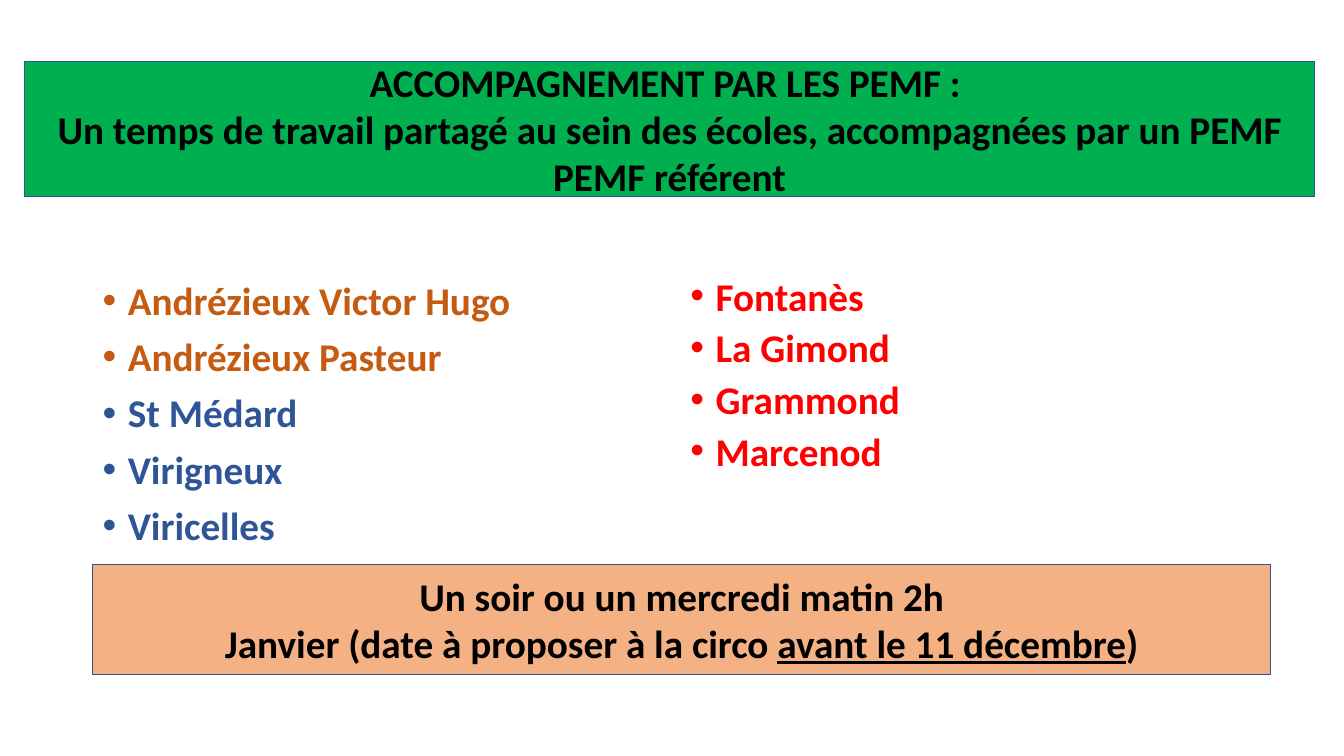
from lxml.etree import SubElement
from pptx import Presentation
from pptx.dml.color import RGBColor
from pptx.enum.shapes import MSO_SHAPE
from pptx.enum.text import MSO_ANCHOR, MSO_AUTO_SIZE, PP_ALIGN
from pptx.oxml.ns import qn
from pptx.util import Inches, Pt

COLORS = {
    "green": "00B050",
    "peach": "F4B183",
    "outline": "325491",
    "black": "000000",
    "orange": "C55A11",
    "blue": "2F5597",
    "red": "FF0000",
}


def color(name):
    """Return the named colour."""
    return RGBColor.from_string(COLORS[name])


def format_font(paragraph, color_name):
    """Apply the slide's bold text style to a paragraph."""
    font = paragraph.font
    font.name = "Calibri"
    font.size = Pt(28)
    font.bold = True
    font.color.rgb = color(color_name)


def fill_banner(shape, box, fill_name, lines):
    """Place a banner and write its lines, each a list of (text, underlined) runs."""
    shape.left, shape.top, shape.width, shape.height = map(Inches, box)
    shape.fill.solid()
    shape.fill.fore_color.rgb = color(fill_name)
    shape.line.color.rgb = color("outline")
    shape.line.width = Pt(1)
    frame = shape.text_frame
    frame.word_wrap = True
    frame.auto_size = MSO_AUTO_SIZE.NONE
    frame.vertical_anchor = MSO_ANCHOR.MIDDLE
    for index, runs in enumerate(lines):
        paragraph = frame.add_paragraph() if index else frame.paragraphs[0]
        paragraph.alignment = PP_ALIGN.CENTER
        format_font(paragraph, "black")
        for text, underlined in runs:
            run = paragraph.add_run()
            run.text = text
            if underlined:
                run.font.underline = True


def add_title_banner(slide, box):
    """Turn the title placeholder into the green banner."""
    fill_banner(slide.shapes.title, box, "green", [
        [("ACCOMPAGNEMENT PAR LES PEMF : ", False)],
        [("Un temps de travail partagé au sein des écoles, accompagnées par un PEMF", False)],
        [("PEMF référent", False)],
    ])


def add_date_banner(slide, box):
    """Add the peach banner with the meeting dates."""
    shape = slide.shapes.add_shape(MSO_SHAPE.RECTANGLE, *map(Inches, box))
    shape.shadow.inherit = False
    fill_banner(shape, box, "peach", [
        [("Un soir ou un mercredi matin 2h", False)],
        [("Janvier (date à proposer à la circo ", False),
         ("avant le 11 décembre", True), (")", False)],
    ])


def add_school_list(slide, box, line_spacing, schools):
    """Add a bulleted list of (school, colour) pairs."""
    frame = slide.shapes.add_textbox(*map(Inches, box)).text_frame
    frame.word_wrap = True
    for index, (school, color_name) in enumerate(schools):
        paragraph = frame.add_paragraph() if index else frame.paragraphs[0]
        paragraph.text = school
        paragraph.line_spacing = line_spacing
        paragraph.space_before = Pt(10)
        format_font(paragraph, color_name)
        properties = paragraph._p.get_or_add_pPr()
        properties.set("marL", str(Inches(0.25)))
        properties.set("indent", str(-Inches(0.25)))
        bullet_font = SubElement(properties, qn("a:buFont"), typeface="Arial")
        bullet = SubElement(properties, qn("a:buChar"), char="•")
        properties.find(qn("a:defRPr")).addprevious(bullet_font)
        bullet_font.addnext(bullet)


def main():
    """Build and save the slide."""
    presentation = Presentation()
    presentation.slide_width = Inches(13.33)
    presentation.slide_height = Inches(7.5)
    slide = presentation.slides.add_slide(presentation.slide_layouts.get_by_name("Title Only"))
    add_school_list(slide, (0.92, 2.74, 5.64, 3.02), 0.9, [
        ("Andrézieux Victor Hugo", "orange"),
        ("Andrézieux Pasteur", "orange"),
        ("St Médard", "blue"),
        ("Virigneux", "blue"),
        ("Viricelles", "blue"),
    ])
    add_school_list(slide, (6.75, 2.74, 5.67, 2.08), 0.8, [
        (school, "red") for school in ("Fontanès", "La Gimond", "Grammond", "Marcenod")
    ])
    add_title_banner(slide, (0.24, 0.61, 12.8, 1.34))
    add_date_banner(slide, (0.92, 5.6, 11.68, 1.09))
    presentation.save("out.pptx")


if __name__ == "__main__":
    main()
